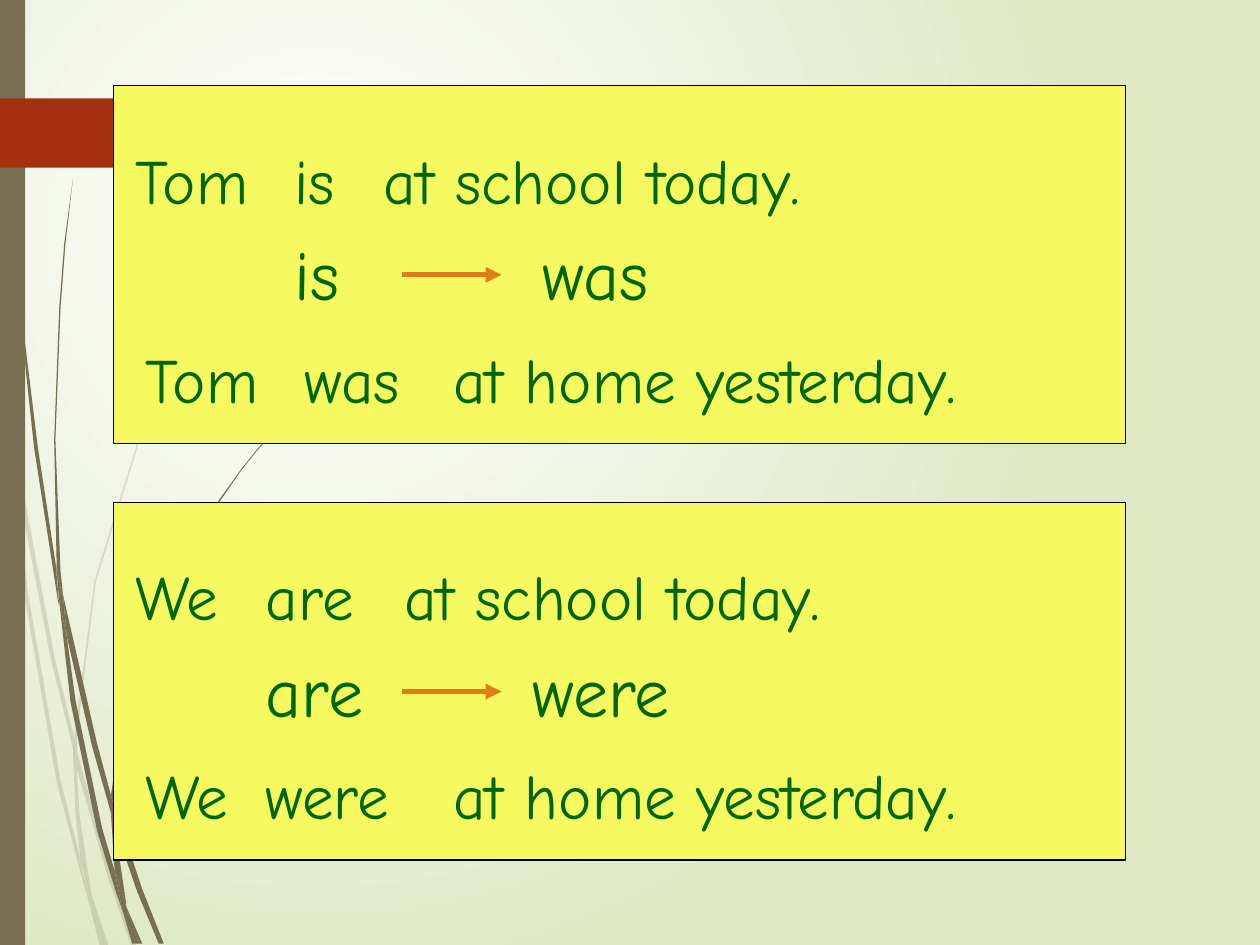
"""Builds a slide contrasting is/was and are/were on a wispy green background."""
from dataclasses import dataclass

from lxml import etree
from pptx import Presentation
from pptx.dml.color import RGBColor
from pptx.enum.shapes import MSO_CONNECTOR, MSO_SHAPE
from pptx.enum.text import MSO_AUTO_SIZE
from pptx.oxml.ns import qn
from pptx.slide import Slide
from pptx.util import Cm, Pt

FONT = "Comic Neue"
GREEN, YELLOW, ORANGE = "006600", "F6FA60", "DE7E18"
BROWN, RED, BLACK = "766F54", "A53010", "000000"
UNIT = Cm(2.54) / 100

PALE_STALKS = [
    [(8, 350), (6, 322), (0, 282), (0, 299), (7, 344)],
    [(40, 522), (59, 599), (59, 586), (43, 520), (10, 345), (12, 376)],
    [(64, 607), (61, 596), (61, 610), (85, 694), (104, 750), (108, 750), (88, 692)],
    [(83, 750), (86, 750), (73, 711)],
    [(64, 683), (48, 619), (22, 469), (12, 376), (8, 350), (19, 470), (45, 621),
     (64, 693), (70, 714), (69, 707)],
    [(58, 599), (60, 646), (64, 683), (67, 692), (73, 711), (72, 706), (63, 646),
     (61, 610), (61, 608)],
    [(61, 584), (76, 462), (111, 349), (159, 245), (187, 198), (201, 175), (217, 154),
     (217, 153), (201, 175), (186, 197), (158, 244), (110, 348), (75, 461), (59, 584),
     (59, 586), (61, 596)],
    [(70, 714), (79, 750), (82, 750)],
    [(61, 608), (61, 610), (61, 596), (59, 586), (58, 599)],
    [(67, 692), (65, 683), (69, 707), (70, 714), (82, 750), (83, 750), (73, 711)],
]
DARK_STALKS = [
    [(5, 110), (14, 233), (27, 355), (46, 477), (47, 481), (45, 457), (45, 453),
     (30, 355), (15, 232), (6, 109), (4, 48), (3, 0), (2, 0), (3, 48)],
    [(73, 592), (88, 645), (88, 633), (88, 631), (77, 590), (50, 472), (53, 505)],
    [(94, 649), (91, 641), (91, 656), (109, 708), (126, 749), (130, 749), (113, 706)],
    [(91, 691), (81, 657), (60, 556), (53, 505), (47, 477), (56, 557), (77, 659),
     (92, 708), (97, 722), (96, 717)],
    [(50, 472), (48, 453), (44, 349), (48, 245), (52, 193), (58, 141), (51, 193),
     (47, 245), (43, 349), (45, 449), (49, 472)],
    [(110, 749), (113, 749), (100, 719)],
    [(47, 477), (53, 505), (50, 472), (49, 472), (45, 449), (45, 453)],
    [(91, 633), (103, 552), (131, 476), (169, 406), (191, 374), (203, 359), (216, 344),
     (215, 344), (203, 358), (191, 373), (168, 405), (129, 474), (101, 551), (88, 631),
     (91, 641)],
    [(97, 722), (105, 749), (108, 749)],
    [(88, 645), (91, 691), (96, 706), (100, 719), (100, 716), (91, 656), (90, 651)],
    [(88, 645), (90, 651), (91, 656), (91, 641), (88, 631), (88, 633)],
    [(96, 706), (91, 691), (96, 717), (97, 722), (108, 749), (110, 749), (100, 719)],
]
TAG = [(149, 107), (124, 132), (121, 133), (0, 133), (0, 78), (121, 78), (124, 79),
       (149, 104)]


@dataclass
class Word:
    text: str
    left: float
    width: float
    wrap: bool = True


@dataclass
class Panel:
    top: float
    today: list[Word]
    change: list[Word]
    yesterday: list[Word]


def rgb(value: str) -> RGBColor:
    return RGBColor.from_string(value)


def add_background(s: Slide) -> None:
    fill = s.background.fill
    fill.gradient()
    for stop, color, position in zip(fill.gradient_stops, ("FFFFFF", "DFE8C4"), (0, 1)):
        stop.color.rgb = rgb(color)
        stop.position = position
    grad = s.background._cSld.find(".//" + qn("a:gradFill"))
    lin = grad.find(qn("a:lin"))
    radial = etree.Element(qn("a:path"), {"path": "circle"})
    etree.SubElement(radial, qn("a:fillToRect"),
                     {"l": "50000", "t": "50000", "r": "100000", "b": "100000"})
    grad.replace(lin, radial)


def add_outline(s: Slide, points: list[tuple[int, int]], color: str,
                opacity: int = 100) -> None:
    builder = s.shapes.build_freeform(*points[0], scale=UNIT)
    builder.add_line_segments(points[1:], close=True)
    sp = builder.convert_to_shape()
    sp.shadow.inherit = False
    sp.fill.solid()
    sp.fill.fore_color.rgb = rgb(color)
    sp.line.fill.background()
    if opacity < 100:
        clr = sp._element.spPr.find(qn("a:solidFill")).find(qn("a:srgbClr"))
        etree.SubElement(clr, qn("a:alpha"), {"val": str(opacity * 1000)})


def add_box(s: Slide, left: float, top: float, width: float, height: float,
            color: str, border: str | None = None) -> None:
    sp = s.shapes.add_shape(MSO_SHAPE.RECTANGLE, Cm(left), Cm(top), Cm(width), Cm(height))
    sp.shadow.inherit = False
    sp.fill.solid()
    sp.fill.fore_color.rgb = rgb(color)
    if border:
        sp.line.color.rgb = rgb(border)
        sp.line.width = Pt(0.75)
    else:
        sp.line.fill.background()


def add_words(s: Slide, words: list[Word], top: float, height: float, size: int) -> None:
    for word in words:
        sp = s.shapes.add_textbox(Cm(word.left), Cm(top), Cm(word.width), Cm(height))
        tf = sp.text_frame
        tf.word_wrap = word.wrap
        tf.auto_size = MSO_AUTO_SIZE.SHAPE_TO_FIT_TEXT
        p = tf.paragraphs[0]
        p.text = word.text
        p.font.name = FONT
        p.font.size = Pt(size)
        p.font.color.rgb = rgb(GREEN)


def add_arrow(s: Slide, left: float, right: float, y: float) -> None:
    arrow = s.shapes.add_connector(MSO_CONNECTOR.STRAIGHT, Cm(left), Cm(y), Cm(right), Cm(y))
    arrow.line.color.rgb = rgb(ORANGE)
    arrow.line.width = Pt(3)
    etree.SubElement(arrow.line._get_or_add_ln(), qn("a:tailEnd"), {"type": "triangle"})
    etree.SubElement(arrow._element.spPr, qn("a:effectLst"))


def add_panel(s: Slide, panel: Panel) -> None:
    add_box(s, 2.29, panel.top, 20.4, 7.21, YELLOW, BLACK)
    add_words(s, panel.today, panel.top + 0.99, 1.78, 36)
    add_words(s, panel.change, panel.top + 2.79, 1.96, 40)
    add_arrow(s, 8.1, 10.11, panel.top + 3.81)
    add_words(s, panel.yesterday, panel.top + 5, 1.78, 36)


def main() -> None:
    prs = Presentation()
    prs.slide_width, prs.slide_height = Cm(25.4), Cm(19.05)
    s = prs.slides.add_slide(prs.slide_layouts[6])
    add_background(s)
    for stalk in PALE_STALKS:
        add_outline(s, stalk, BROWN, 20)
    for stalk in DARK_STALKS:
        add_outline(s, stalk, BROWN)
    add_box(s, 0, 0, 0.51, 19.05, BROWN)
    add_outline(s, TAG, RED)

    home = Word("at home yesterday.", 8.89, 12.4)
    panels = [
        Panel(1.73,
              [Word("Tom", 2.49, 3.2), Word("at school today.", 7.49, 11.4),
               Word("is", 5.69, 1.5, False)],
              [Word("is", 5.69, 1.8), Word("was", 10.69, 4.01)],
              [Word("Tom", 2.69, 3.2), home, Word("was", 5.89, 2.64, False)]),
        Panel(10.13,
              [Word("We", 2.49, 3.2), Word("at school today.", 7.9, 11.4),
               Word("are", 5.11, 3)],
              [Word("are", 5.11, 2.79), Word("were", 10.49, 4.01)],
              [Word("We", 2.69, 3.2), home, Word("were", 5.11, 3.38, False)]),
    ]
    for panel in panels:
        add_panel(s, panel)
    prs.save("out.pptx")


if __name__ == "__main__":
    main()
